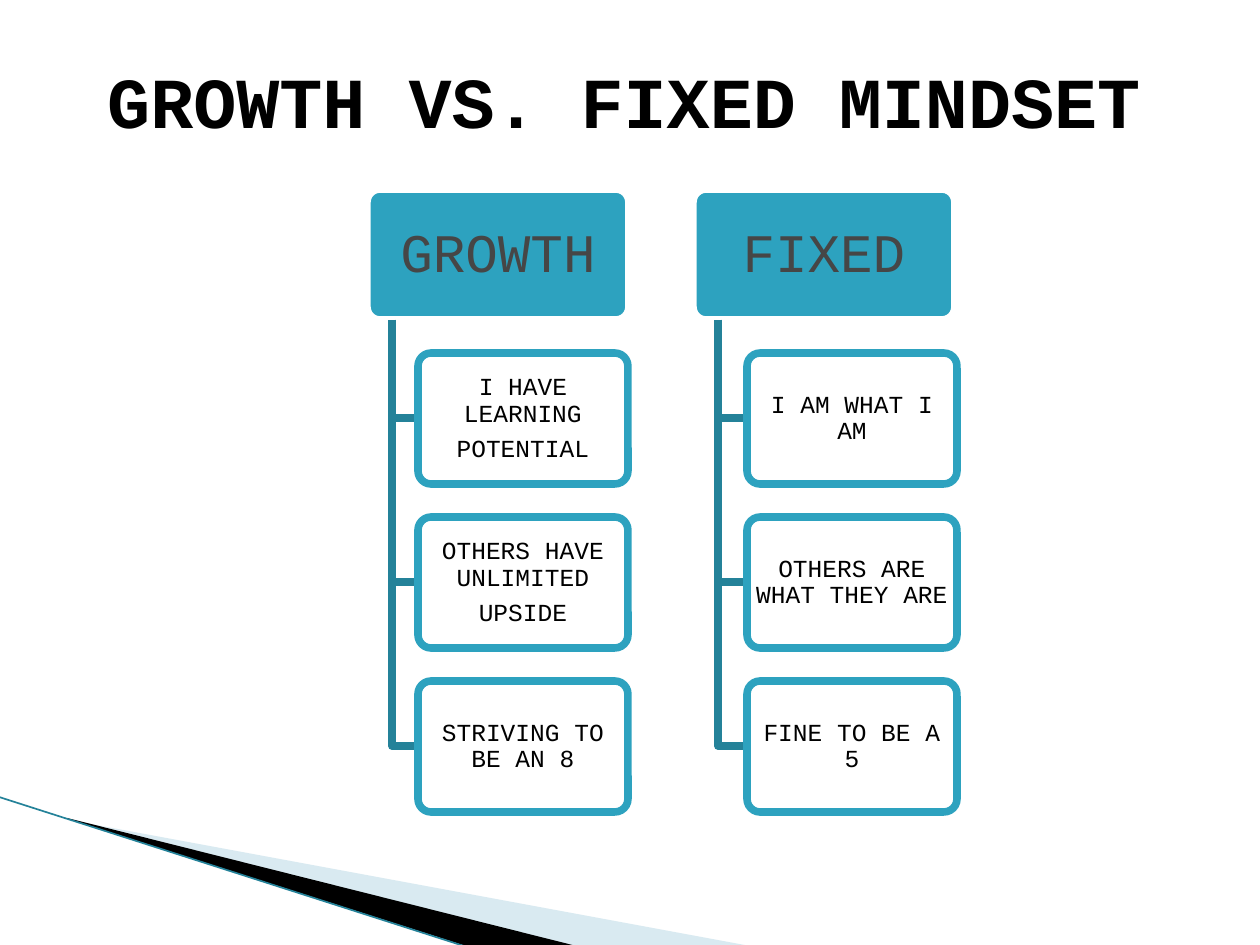
import pptx
import pptx.util
import pptx.dml.color
import pptx.enum.shapes
import pptx.enum.text
import pptx.oxml.ns
from lxml import etree

SCALE = 914400 / 126  # EMU per px

COLORS = {
    "ink": "000000",
    "white": "FFFFFF",
    "teal": "2DA2BF",
    "branch": "248299",
    "header_text": "464646",
    "mist": "A0CBDC",
}

COLUMNS = [
    # heading, header left, item left, items (one list of paragraphs each)
    ("GROWTH", 367, 418, [["I HAVE LEARNING", "POTENTIAL"],
                          ["OTHERS HAVE UNLIMITED", "UPSIDE"],
                          ["STRIVING TO BE AN 8"]]),
    ("FIXED", 693, 747, [["I AM WHAT I AM"],
                         ["OTHERS ARE WHAT THEY ARE"],
                         ["FINE TO BE A 5"]]),
]
HEADER_TOP, HEADER_WIDTH, BOX_HEIGHT = 189, 262, 131
ITEM_TOP, ITEM_WIDTH, ITEM_STEP = 353, 210, 164
TRUNK_INDENT = 25


def px(length):
    return pptx.util.Emu(round(length * SCALE))


def rgb(name):
    return pptx.dml.color.RGBColor.from_string(COLORS[name])


class SlideBuilder:
    font = "Courier New"
    line_width = 4.33

    def __init__(self, slide):
        self.slide = slide

    def fill(self, shape, color, opacity=100):
        shape.fill.solid()
        shape.fill.fore_color.rgb = rgb(color)
        if opacity < 100:
            tag = pptx.oxml.ns.qn("a:srgbClr")
            solid = next(shape._element.spPr.iter(tag))
            etree.SubElement(solid, pptx.oxml.ns.qn("a:alpha"), val=str(opacity * 1000))

    def outline(self, shape, color, width):
        shape.line.color.rgb = rgb(color)
        shape.line.width = pptx.util.Pt(width)

    def label(self, shape, lines, size, color, inset=(0, 0), bold=False, spacing=1.0, after=0):
        frame = shape.text_frame
        frame.word_wrap = True
        frame.vertical_anchor = pptx.enum.text.MSO_ANCHOR.MIDDLE
        frame.margin_left = frame.margin_right = px(inset[0])
        frame.margin_top = frame.margin_bottom = px(inset[1])
        frame.text = "\n".join(lines)
        for paragraph in frame.paragraphs:
            paragraph.alignment = pptx.enum.text.PP_ALIGN.CENTER
            paragraph.line_spacing = spacing
            paragraph.space_after = pptx.util.Pt(after)
            for run in paragraph.runs:
                run.font.name = self.font
                run.font.size = pptx.util.Pt(size)
                run.font.bold = bold
                run.font.color.rgb = rgb(color)

    def title(self, text, left, top, width, height):
        box = self.slide.shapes.add_textbox(px(left), px(top), px(width), px(height))
        self.label(box, [text], 41, "ink", inset=(12, 6), bold=True)

    def card(self, left, top, width, fill, border, lines, size, color, inset, opacity=100):
        box = self.slide.shapes.add_shape(
            pptx.enum.shapes.MSO_SHAPE.ROUNDED_RECTANGLE,
            px(left), px(top), px(width), px(BOX_HEIGHT))
        box.adjustments[0] = 0.1
        box.shadow.inherit = False
        self.fill(box, fill, opacity)
        self.outline(box, border, self.line_width)
        self.label(box, lines, size, color, inset, spacing=0.9, after=round(size * 0.35))

    def freeform(self, points, closed):
        builder = self.slide.shapes.build_freeform(*points[0], scale=SCALE)
        builder.add_line_segments(points[1:], close=closed)
        shape = builder.convert_to_shape()
        shape.shadow.inherit = False
        return shape

    def wedge(self, points, color, opacity=100):
        shape = self.freeform(points, True)
        self.fill(shape, color, opacity)
        shape.line.fill.background()

    def branch(self, points):
        shape = self.freeform(points, False)
        shape.fill.background()
        self.outline(shape, "branch", self.line_width)

    def line(self, start, end, color, width):
        line = self.slide.shapes.add_connector(
            pptx.enum.shapes.MSO_CONNECTOR.STRAIGHT,
            px(start[0]), px(start[1]), px(end[0]), px(end[1]))
        self.outline(line, color, width)
        etree.SubElement(line._element.spPr, pptx.oxml.ns.qn("a:effectLst"))


def main():
    deck = pptx.Presentation()
    deck.slide_width, deck.slide_height = px(1260), px(945)
    builder = SlideBuilder(deck.slides.add_slide(deck.slide_layouts[6]))

    # Corner decoration
    builder.wedge([(69, 820), (750, 946), (575, 946), (69, 819)], "mist", 40)
    builder.wedge([(67, 818), (576, 946), (469, 947), (68, 819)], "ink")
    builder.line((-1, 797), (467, 947), "branch", 0.95)

    # Title
    builder.title("GROWTH VS. FIXED MINDSET", 21, 21, 1207, 158)

    # Two hierarchies: a header with branches to its items
    for heading, left, item_left, items in COLUMNS:
        builder.card(left, HEADER_TOP, HEADER_WIDTH, "teal", "white",
                     [heading], 31, "header_text", (8, 5))
        trunk = left + TRUNK_INDENT
        for row, lines in enumerate(items):
            top = ITEM_TOP + row * ITEM_STEP
            middle = top + BOX_HEIGHT // 2
            builder.branch([(trunk, HEADER_TOP + BOX_HEIGHT), (trunk, middle), (item_left, middle)])
            builder.card(item_left, top, ITEM_WIDTH, "white", "teal",
                         lines, 14, "ink", (4, 3), opacity=90)

    deck.save("out.pptx")


if __name__ == "__main__":
    main()
